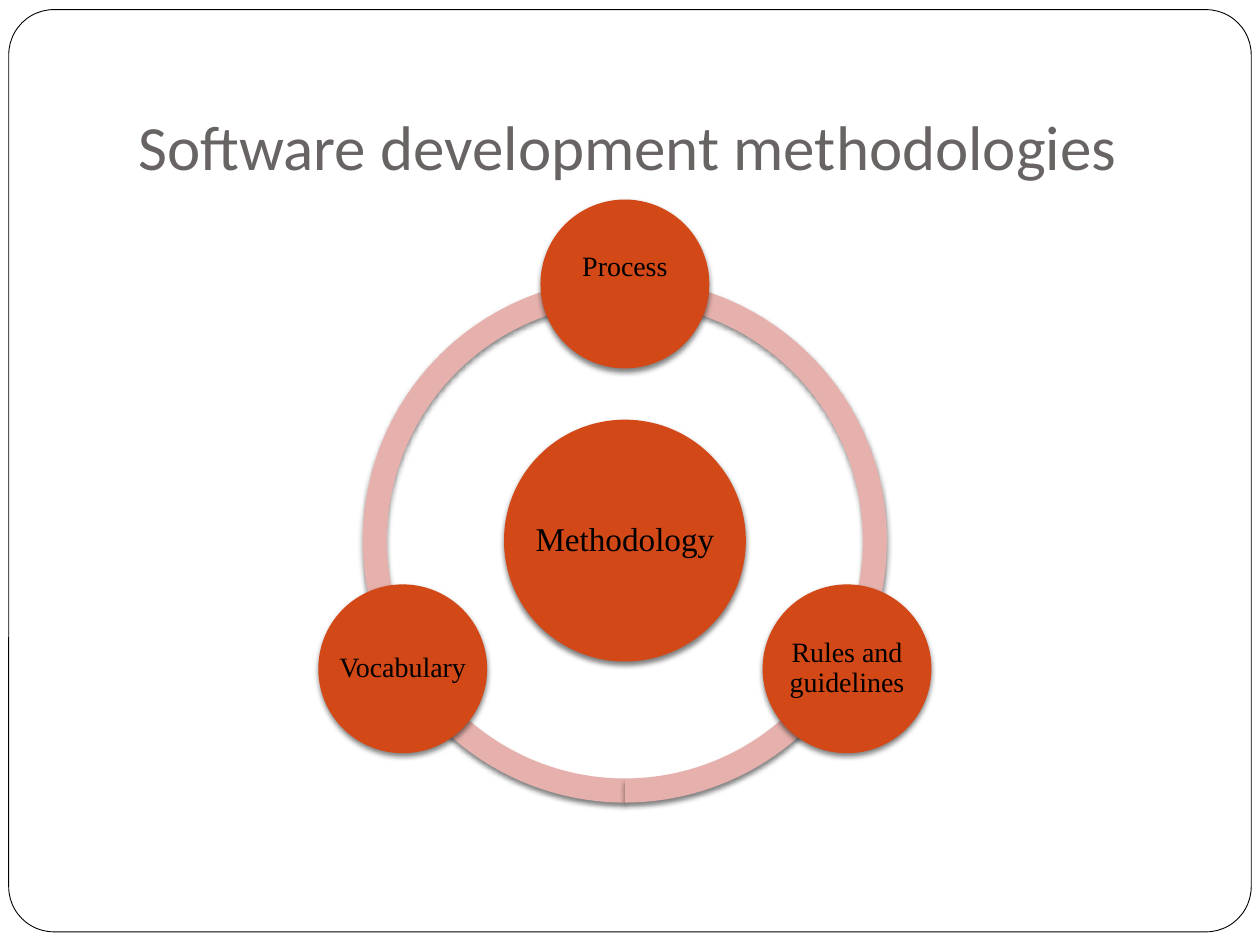
from dataclasses import dataclass
from math import cos, radians, sin

from lxml.etree import SubElement
from pptx import Presentation
from pptx.dml.color import RGBColor
from pptx.enum.shapes import MSO_SHAPE as Preset
from pptx.enum.text import MSO_ANCHOR as Anchor, PP_ALIGN as Align
from pptx.oxml.ns import qn
from pptx.shapes.autoshape import Shape
from pptx.slide import Slide
from pptx.util import Pt


@dataclass(frozen=True)
class Theme:
    paper: str = "FFFFFF"
    ink: str = "000000"
    heading: str = "696464"
    disc: str = "D34817"
    ring: str = "E6B1AC"
    heading_font: str = "Calibri"
    label_font: str = "Times New Roman"
    heading_size: float = 36
    hub_size: float = 19
    satellite_size: float = 16


@dataclass(frozen=True)
class Box:
    left: float
    top: float
    width: float
    height: float

    def lengths(self) -> tuple[Pt, ...]:
        return Pt(self.left), Pt(self.top), Pt(self.width), Pt(self.height)


@dataclass(frozen=True)
class Satellite:
    label: str
    angle: float
    lift: float = 0


@dataclass(frozen=True)
class Arc:
    start: float
    end: float


THEME = Theme()
HUB_X, HUB_Y = 357.1, 308.9
HUB_DIAMETER = 138.2
SATELLITE_DIAMETER = 96.5
ORBIT_RADIUS = 146.6
RING_DIAMETER = 299.5
RING_THICKNESS = 0.046
ARCS = [Arc(90, 162), Arc(18, 90), Arc(162, 18)]
SATELLITES = [
    Satellite("Process", 270, lift=19),
    Satellite("Rules and guidelines", 30),
    Satellite("Vocabulary", 150),
]


def square(x: float, y: float, side: float) -> Box:
    return Box(x - side / 2, y - side / 2, side, side)


def add_preset(slide: Slide, preset: Preset, box: Box, fill: str) -> Shape:
    shape = slide.shapes.add_shape(preset, *box.lengths())
    shape.fill.solid()
    shape.fill.fore_color.rgb = RGBColor.from_string(fill)
    shape.line.fill.background()
    shape.shadow.inherit = False
    return shape


def cast_shadow(shape: Shape) -> None:
    effects = shape._element.spPr.find(qn("a:effectLst"))
    shadow = SubElement(effects, qn("a:outerShdw"), blurRad=str(Pt(3)),
                        dist=str(Pt(2)), dir="5400000", rotWithShape="0")
    color = SubElement(shadow, qn("a:srgbClr"), val=THEME.ink)
    SubElement(color, qn("a:alpha"), val="50000")


def add_text(slide: Slide, text: str, box: Box, *, font: str, size: float, color: str,
             align: Align = Align.CENTER, anchor: Anchor = Anchor.MIDDLE,
             insets: tuple[float, ...] = (1.5, 1.5, 1.5, 1.5),
             line_spacing: float = 0.9) -> None:
    frame = slide.shapes.add_textbox(*box.lengths()).text_frame
    frame.word_wrap = True
    frame.vertical_anchor = anchor
    (frame.margin_left, frame.margin_top,
     frame.margin_right, frame.margin_bottom) = map(Pt, insets)
    paragraph = frame.paragraphs[0]
    paragraph.alignment = align
    paragraph.line_spacing = line_spacing
    run = paragraph.add_run()
    run.text = text
    run.font.name = font
    run.font.size = Pt(size)
    run.font.color.rgb = RGBColor.from_string(color)


def add_arc(slide: Slide, arc: Arc) -> None:
    band = add_preset(slide, Preset.BLOCK_ARC,
                      square(HUB_X, HUB_Y, RING_DIAMETER), THEME.ring)
    for index, value in enumerate((arc.start * 0.6, arc.end * 0.6, RING_THICKNESS)):
        band.adjustments[index] = value
    cast_shadow(band)


def add_disc(slide: Slide, label: str, box: Box, size: float, lift: float = 0) -> None:
    cast_shadow(add_preset(slide, Preset.OVAL, box, THEME.disc))
    add_text(slide, label, box, font=THEME.label_font, size=size, color=THEME.ink,
             insets=(1.5, 1.5, 1.5, 1.5 + lift))


def add_border(slide: Slide) -> None:
    border = add_preset(slide, Preset.ROUNDED_RECTANGLE,
                        Box(5, 5.5, 710, 527), THEME.paper)
    border.adjustments[0] = 0.049
    border.line.color.rgb = RGBColor.from_string(THEME.ink)
    border.line.width = Pt(0.5)


def main() -> None:
    deck = Presentation()
    deck.slide_width, deck.slide_height = Pt(720), Pt(540)
    slide = deck.slides.add_slide(deck.slide_layouts[6])

    add_border(slide)
    add_text(slide, "Software development methodologies", Box(72, 21.6, 612, 90),
             font=THEME.heading_font, size=THEME.heading_size, color=THEME.heading,
             align=Align.LEFT, anchor=Anchor.BOTTOM, insets=(7.2, 3.6, 7.2, 7.2),
             line_spacing=1.0)
    for arc in ARCS:
        add_arc(slide, arc)
    add_disc(slide, "Methodology", square(HUB_X, HUB_Y, HUB_DIAMETER), THEME.hub_size)
    for satellite in SATELLITES:
        angle = radians(satellite.angle)
        place = square(HUB_X + ORBIT_RADIUS * cos(angle),
                       HUB_Y + ORBIT_RADIUS * sin(angle), SATELLITE_DIAMETER)
        add_disc(slide, satellite.label, place, THEME.satellite_size, satellite.lift)

    deck.save("out.pptx")


if __name__ == "__main__":
    main()
